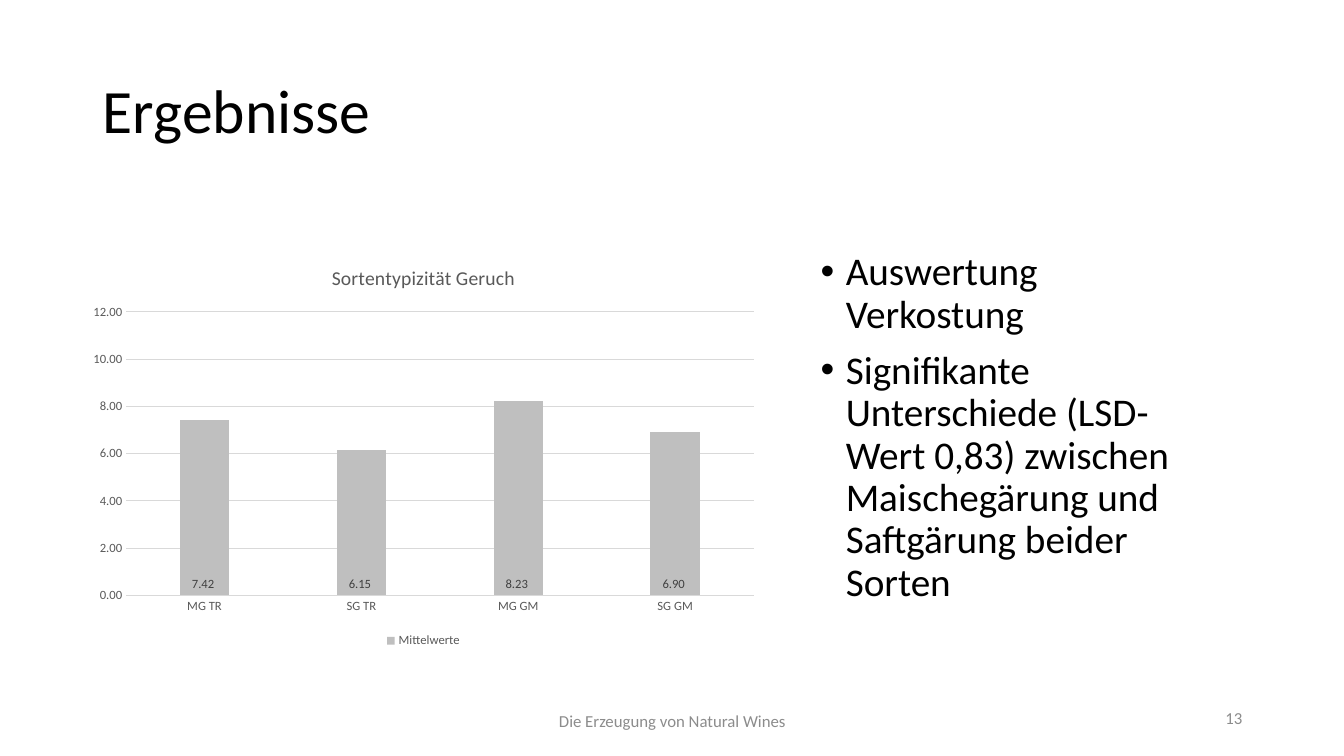
from pptx import Presentation
from pptx.chart.data import CategoryChartData
from pptx.dml.color import RGBColor
from pptx.enum.chart import (XL_CHART_TYPE, XL_LABEL_POSITION,
                             XL_LEGEND_POSITION, XL_TICK_MARK)
from pptx.enum.text import MSO_ANCHOR, PP_ALIGN
from pptx.oxml.ns import qn
from pptx.util import Pt
from lxml import etree

PX = 9144  # 100 px to the inch
FONT = "Calibri"
COLORS = {"text": "000000", "muted": "8C8C8C", "axis": "595959",
          "grid": "D9D9D9", "bar": "BFBFBF", "label": "404040"}
COLUMN = XL_CHART_TYPE.COLUMN_CLUSTERED
BASE = XL_LABEL_POSITION.INSIDE_BASE
BOTTOM = XL_LEGEND_POSITION.BOTTOM
NO_TICK = XL_TICK_MARK.NONE
MIDDLE, TOP = MSO_ANCHOR.MIDDLE, MSO_ANCHOR.TOP
LEFT, CENTER, RIGHT = PP_ALIGN.LEFT, PP_ALIGN.CENTER, PP_ALIGN.RIGHT


def emu(box):
    return [n * PX for n in box]


def color(name):
    return RGBColor.from_string(COLORS[name])


def style(font, size, name):
    font.name = FONT
    font.size = Pt(size)
    font.bold = False
    font.color.rgb = color(name)


def add_run(para, text, size, name):
    run = para.add_run()
    run.text = text
    style(run.font, size, name)


def add_title(slide, box, text):
    title = slide.shapes.title
    title.left, title.top, title.width, title.height = emu(box)
    frame = title.text_frame
    frame.word_wrap = True
    frame.vertical_anchor = MIDDLE
    para = frame.paragraphs[0]
    para.alignment = LEFT
    para.line_spacing = 0.9
    add_run(para, text, 44, "text")


def add_frame(slide, box, anchor):
    frame = slide.shapes.add_textbox(*emu(box)).text_frame
    frame.word_wrap = True
    frame.vertical_anchor = anchor
    return frame


def add_list(slide, box, items):
    frame = add_frame(slide, box, TOP)
    for i, item in enumerate(items):
        para = frame.add_paragraph() if i else frame.paragraphs[0]
        para.line_spacing = 0.9
        para.space_before = Pt(10)
        add_run(para, item, 28, "text")
        # Hanging bullet
        props = para._p.get_or_add_pPr()
        props.set("marL", str(25 * PX))
        props.set("indent", str(-25 * PX))
        etree.SubElement(props, qn("a:buFont")).set("typeface", "Arial")
        etree.SubElement(props, qn("a:buChar")).set("char", "•")


def add_note(slide, box, text, align):
    para = add_frame(slide, box, MIDDLE).paragraphs[0]
    para.alignment = align
    add_run(para, text, 12, "muted")


def style_line(line):
    line.color.rgb = color("grid")
    line.width = Pt(0.75)


def add_bars(slide, box, title, name, values):
    data = CategoryChartData(number_format="0.00")
    data.categories = list(values)
    data.add_series(name, list(values.values()))
    chart = slide.shapes.add_chart(COLUMN, *emu(box), data).chart
    style(chart.font, 10, "text")

    # Title and legend
    chart.has_title = True
    add_run(chart.chart_title.text_frame.paragraphs[0], title, 14, "axis")
    chart.chart_title.include_in_layout = False
    chart.has_legend = True
    chart.legend.position = BOTTOM
    chart.legend.include_in_layout = False
    style(chart.legend.font, 9, "axis")

    # Axes
    cat, val = chart.category_axis, chart.value_axis
    for axis in (cat, val):
        axis.major_tick_mark = axis.minor_tick_mark = NO_TICK
        style(axis.tick_labels.font, 9, "axis")
    style_line(cat.format.line)
    val.format.line.fill.background()
    val.minimum_scale, val.maximum_scale, val.major_unit = 0, 12, 2
    val.tick_labels.number_format = "#,##0.00"
    val.tick_labels.number_format_is_linked = False
    style_line(val.major_gridlines.format.line)

    # Bars and values
    plot = chart.plots[0]
    plot.vary_by_categories = False
    plot.gap_width, plot.overlap = 219, -27
    bars = plot.series[0]
    bars.format.fill.solid()
    bars.format.fill.fore_color.rgb = color("bar")
    labels = bars.data_labels
    labels.show_value = True
    labels.position = BASE
    labels.number_format = "0.00_)"
    labels.number_format_is_linked = False
    style(labels.font, 9, "label")


def add_footer(slide, box, text, number):
    x, y, w, h = box
    add_note(slide, (x, y, 450, h), text, CENTER)
    add_note(slide, (x + w - 119, y + 3, 119, 29), number, RIGHT)


def main():
    deck = Presentation()
    deck.slide_width, deck.slide_height = emu((1333, 750))
    slide = deck.slides.add_slide(deck.slide_layouts[5])

    add_title(slide, (92, 40, 1150, 145), "Ergebnisse")
    add_bars(slide, (79, 245, 682, 402), "Sortentypizität Geruch", "Mittelwerte",
             {"MG TR": 7.42, "SG TR": 6.15, "MG GM": 8.23, "SG GM": 6.9})
    add_list(slide, (804, 245, 395, 435), [
        "Auswertung Verkostung",
        "Signifikante Unterschiede (LSD-Wert 0,83) zwischen "
        "Maischegärung und Saftgärung beider Sorten"])
    add_footer(slide, (442, 695, 800, 40), "Die Erzeugung von Natural Wines", "13")

    deck.save("out.pptx")


if __name__ == "__main__":
    main()
